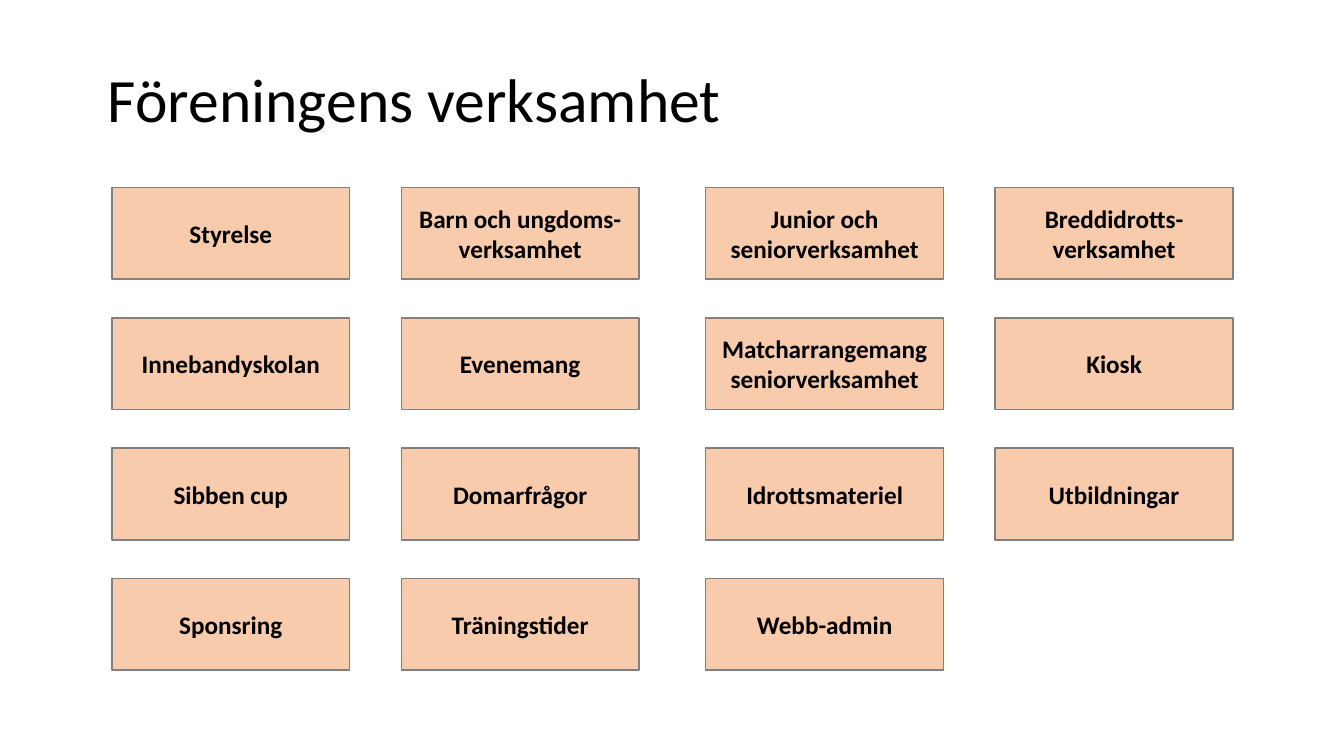
from pptx import Presentation
from pptx.dml.color import RGBColor
from pptx.enum.shapes import MSO_SHAPE
from pptx.enum.text import MSO_ANCHOR, MSO_AUTO_SIZE, PP_ALIGN
from pptx.util import Inches, Pt

RECTANGLE = MSO_SHAPE.RECTANGLE
MIDDLE, BOTTOM = MSO_ANCHOR.MIDDLE, MSO_ANCHOR.BOTTOM
NO_AUTOFIT = MSO_AUTO_SIZE.NONE
LEFT, CENTER = PP_ALIGN.LEFT, PP_ALIGN.CENTER

COLORS = {"text": "000000", "box": "F8CBAD", "border": "808080"}
FONT = "Calibri"
TITLE_ONLY_LAYOUT = 5

ACTIVITIES = [
    ["Styrelse", "Barn och ungdoms-verksamhet",
     "Junior och seniorverksamhet", "Breddidrotts-verksamhet"],
    ["Innebandyskolan", "Evenemang",
     "Matcharrangemang seniorverksamhet", "Kiosk"],
    ["Sibben cup", "Domarfrågor", "Idrottsmateriel", "Utbildningar"],
    ["Sponsring", "Träningstider", "Webb-admin"],
]
COLUMN_OFFSETS = [0, 2.87, 5.89, 8.76]
ROW_PITCH = 1.293
BOX_WIDTH, BOX_HEIGHT = 2.36, 0.91


def color(name):
    return RGBColor.from_string(COLORS[name])


def write_text(text_frame, text, size, bold, alignment, anchor):
    text_frame.word_wrap = True
    text_frame.auto_size = NO_AUTOFIT
    text_frame.vertical_anchor = anchor
    paragraph = text_frame.paragraphs[0]
    paragraph.alignment = alignment
    run = paragraph.add_run()
    run.text = text
    run.font.name = FONT
    run.font.size = Pt(size)
    run.font.bold = bold
    run.font.color.rgb = color("text")
    return paragraph


def place_title(slide, left, top, width, height):
    title = slide.shapes.title
    title.left, title.top = Inches(left), Inches(top)
    title.width, title.height = Inches(width), Inches(height)
    paragraph = write_text(title.text_frame, "Föreningens verksamhet",
                           44, False, LEFT, BOTTOM)
    paragraph.line_spacing = 0.9


def add_activity_box(slide, text, left, top):
    shape = slide.shapes.add_shape(RECTANGLE, Inches(left), Inches(top),
                                   Inches(BOX_WIDTH), Inches(BOX_HEIGHT))
    shape.shadow.inherit = False
    shape.fill.solid()
    shape.fill.fore_color.rgb = color("box")
    shape.line.color.rgb = color("border")
    shape.line.width = Pt(1)
    write_text(shape.text_frame, text, 18, True, CENTER, MIDDLE)


def add_activity_grid(slide, left, top):
    for row, names in enumerate(ACTIVITIES):
        for offset, name in zip(COLUMN_OFFSETS, names):
            add_activity_box(slide, name, left + offset, top + row * ROW_PITCH)


def main():
    presentation = Presentation()
    presentation.slide_width = Inches(13.33)
    presentation.slide_height = Inches(7.5)
    layout = presentation.slide_layouts[TITLE_ONLY_LAYOUT]
    slide = presentation.slides.add_slide(layout)
    place_title(slide, 0.97, 0.49, 11.5, 0.91)
    add_activity_grid(slide, 1.11, 1.86)
    presentation.save("out.pptx")


if __name__ == "__main__":
    main()
